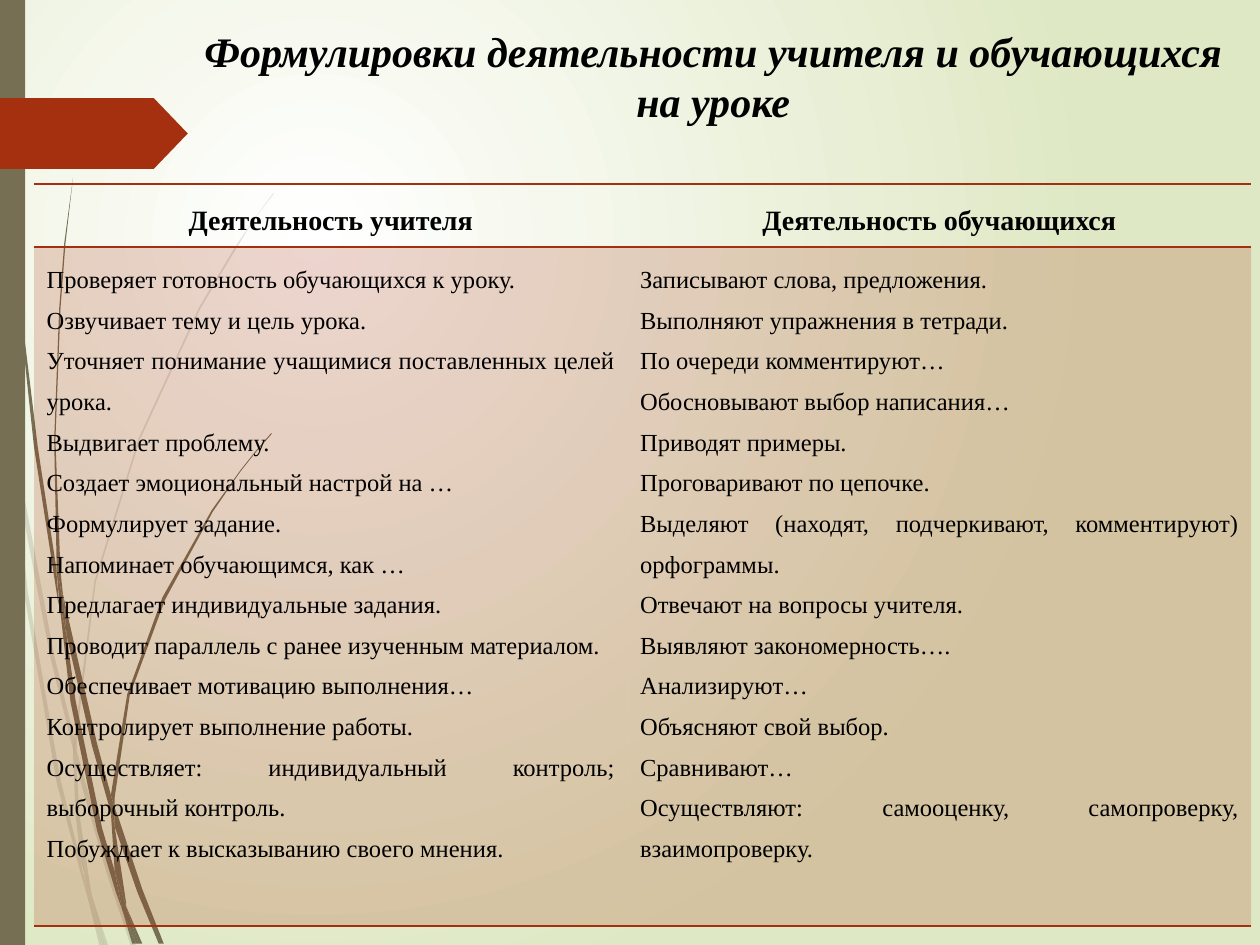
from dataclasses import dataclass

from lxml.etree import SubElement
from pptx import Presentation
from pptx.dml.color import RGBColor
from pptx.enum.shapes import MSO_SHAPE
from pptx.enum.text import MSO_ANCHOR, MSO_AUTO_SIZE, PP_ALIGN
from pptx.oxml.ns import qn
from pptx.util import Inches, Pt

OLIVE = RGBColor(0x76, 0x6F, 0x54)
RUST = RGBColor(0xA5, 0x30, 0x10)
PALE_GREEN = RGBColor(0xDF, 0xE8, 0xC4)
WHITE = RGBColor(0xFF, 0xFF, 0xFF)
BLACK = RGBColor(0, 0, 0)
FONT = "Times New Roman"
NO_STYLE = "{2D5ABB26-0587-4C30-8999-92F81FD0307C}"


@dataclass
class Grass:
    """Blades of grass, outlined in hundredths of an inch."""
    opacity: int
    blades: list[list[tuple[int, int]]]


@dataclass
class Column:
    heading: str
    width: float
    actions: list[str]


PALE_GRASS = Grass(20, [
    [(8, 350), (6, 322), (0, 282), (0, 299), (7, 344)],
    [(40, 522), (59, 599), (59, 586), (43, 520), (10, 345), (12, 376)],
    [(64, 607), (61, 596), (61, 610), (85, 694), (104, 751), (108, 751), (88, 692)],
    [(83, 751), (86, 751), (73, 711)],
    [(64, 683), (48, 619), (22, 469), (12, 376), (8, 350), (19, 470), (45, 621),
     (64, 693), (70, 714), (69, 707)],
    [(58, 599), (60, 646), (64, 683), (67, 692), (73, 711), (72, 706), (63, 646),
     (61, 610), (61, 608)],
    [(61, 584), (76, 462), (111, 349), (159, 245), (187, 198), (201, 175), (217, 154),
     (217, 153), (201, 175), (186, 197), (158, 244), (110, 348), (75, 461), (59, 584),
     (59, 586), (61, 596)],
    [(70, 714), (79, 751), (82, 751)],
    [(61, 608), (61, 610), (61, 596), (59, 586), (58, 599)],
    [(67, 692), (65, 683), (69, 707), (70, 714), (82, 751), (83, 751), (73, 711)],
])
DARK_GRASS = Grass(100, [
    [(5, 110), (14, 233), (27, 355), (46, 477), (47, 481), (45, 457), (45, 453),
     (30, 355), (15, 232), (6, 109), (4, 48), (3, 0), (2, 0), (3, 48)],
    [(73, 592), (88, 645), (88, 633), (88, 631), (77, 590), (50, 472), (53, 505)],
    [(94, 649), (91, 641), (91, 656), (109, 708), (126, 749), (130, 749), (113, 706)],
    [(91, 691), (81, 657), (60, 556), (53, 505), (47, 477), (56, 557), (77, 659),
     (92, 708), (97, 722), (96, 717)],
    [(50, 472), (48, 453), (44, 349), (48, 245), (52, 193), (58, 141), (51, 193),
     (47, 245), (43, 349), (45, 449), (49, 472)],
    [(110, 749), (113, 749), (100, 719)],
    [(47, 477), (53, 505), (50, 472), (49, 472), (45, 449), (45, 453)],
    [(91, 633), (103, 552), (131, 476), (169, 406), (191, 374), (203, 359), (216, 344),
     (215, 344), (203, 358), (191, 373), (168, 405), (129, 474), (101, 551), (88, 631),
     (91, 641)],
    [(97, 722), (105, 749), (108, 749)],
    [(88, 645), (91, 691), (96, 706), (100, 719), (100, 716), (91, 656), (90, 651)],
    [(88, 645), (90, 651), (91, 656), (91, 641), (88, 631), (88, 633)],
    [(96, 706), (91, 691), (96, 717), (97, 722), (108, 749), (110, 749), (100, 719)],
])

TITLE = "Формулировки деятельности учителя и обучающихся\nна уроке"
TEACHER = Column("Деятельность учителя", 4.71, [
    "Проверяет готовность обучающихся к уроку.",
    "Озвучивает тему и цель урока.",
    "Уточняет понимание учащимися поставленных целей урока.",
    "Выдвигает проблему.",
    "Создает эмоциональный настрой на …",
    "Формулирует задание.",
    "Напоминает обучающимся, как …",
    "Предлагает индивидуальные задания.",
    "Проводит параллель с ранее изученным материалом.",
    "Обеспечивает мотивацию выполнения…",
    "Контролирует выполнение работы.",
    "Осуществляет: индивидуальный контроль; выборочный контроль.",
    "Побуждает к высказыванию своего мнения.",
])
STUDENTS = Column("Деятельность обучающихся", 4.95, [
    "Записывают слова, предложения.",
    "Выполняют упражнения в тетради.",
    "По очереди комментируют…",
    "Обосновывают выбор написания…",
    "Приводят примеры.",
    "Проговаривают по цепочке.",
    "Выделяют (находят, подчеркивают, комментируют) орфограммы.",
    "Отвечают на вопросы учителя.",
    "Выявляют закономерность….",
    "Анализируют…",
    "Объясняют свой выбор.",
    "Сравнивают…",
    "Осуществляют: самооценку, самопроверку, взаимопроверку.",
])


def set_opacity(properties, percent: int) -> None:
    color = properties.find(qn("a:solidFill")).find(qn("a:srgbClr"))
    SubElement(color, qn("a:alpha"), val=str(percent * 1000))


def paint(shape, color: RGBColor) -> None:
    shape.shadow.inherit = False
    shape.fill.solid()
    shape.fill.fore_color.rgb = color
    shape.line.fill.background()


def paint_background(slide) -> None:
    fill = slide.background.fill
    fill.gradient()
    for stop, color, position in zip(fill.gradient_stops, (WHITE, PALE_GREEN), (0, 1)):
        stop.color.rgb = color
        stop.position = position
    gradient = next(slide.element.iter(qn("a:gradFill")))
    gradient.remove(gradient.find(qn("a:lin")))
    circle = SubElement(gradient, qn("a:path"), path="circle")
    SubElement(circle, qn("a:fillToRect"), l="50000", t="50000", r="100000", b="100000")


def draw_grass(slide, grass: Grass) -> None:
    tuft = slide.shapes.add_group_shape()
    for start, *rest in grass.blades:
        outline = tuft.shapes.build_freeform(*start, scale=Inches(0.01))
        outline.add_line_segments(rest, close=True)
        blade = outline.convert_to_shape()
        paint(blade, OLIVE)
        if grass.opacity < 100:
            set_opacity(blade.element.spPr, grass.opacity)


def format_text(frame, size: int, align: PP_ALIGN, spacing: float = 1.0,
                bold: bool = False, italic: bool = False) -> None:
    for paragraph in frame.paragraphs:
        paragraph.alignment = align
        paragraph.line_spacing = spacing
        for run in paragraph.runs:
            font = run.font
            font.name, font.size, font.color.rgb = FONT, Pt(size), BLACK
            font.bold, font.italic = bold, italic


def add_border(cell, side: str) -> None:
    line = SubElement(cell._tc.get_or_add_tcPr(), qn(f"a:{side}"), w=str(Pt(1)))
    SubElement(SubElement(line, qn("a:solidFill")), qn("a:srgbClr"), val=str(RUST))


def draw_table(slide, columns: list[Column]) -> None:
    width = sum(column.width for column in columns)
    table = slide.shapes.add_table(2, len(columns), Inches(0.27), Inches(1.46),
                                   Inches(width), Inches(5.89)).table
    table._tbl.tblPr.find(qn("a:tableStyleId")).text = NO_STYLE
    table.first_row = table.horz_banding = False
    table.rows[0].height, table.rows[1].height = Inches(0.5), Inches(5.39)
    for index, column in enumerate(columns):
        table.columns[index].width = Inches(column.width)
        heading, actions = table.cell(0, index), table.cell(1, index)
        heading.text_frame.text = column.heading
        format_text(heading.text_frame, 16, PP_ALIGN.CENTER, 1.5, bold=True)
        actions.text_frame.text = "\n".join(column.actions)
        format_text(actions.text_frame, 14, PP_ALIGN.JUSTIFY, 1.5)
        # Borders go before the fill in the cell properties
        for cell, sides in ((heading, ("lnT", "lnB")), (actions, ("lnT", "lnB"))):
            for side in sides:
                add_border(cell, side)
        heading.fill.background()
        actions.fill.solid()
        actions.fill.fore_color.rgb = RUST
        set_opacity(actions._tc.tcPr, 20)


def main() -> None:
    prs = Presentation()
    prs.slide_width, prs.slide_height = Inches(10), Inches(7.5)
    slide = prs.slides.add_slide(prs.slide_layouts[5])

    # Background, grass, side band and arrow
    paint_background(slide)
    draw_grass(slide, PALE_GRASS)
    draw_grass(slide, DARK_GRASS)
    band = slide.shapes.add_shape(MSO_SHAPE.RECTANGLE, 0, 0, Inches(0.2), Inches(7.5))
    paint(band, OLIVE)
    arrow = slide.shapes.add_shape(MSO_SHAPE.PENTAGON, 0, Inches(0.78),
                                   Inches(1.49), Inches(0.56))
    arrow.adjustments[0] = 0.48
    paint(arrow, RUST)

    # Title
    title = slide.shapes.title
    title.left, title.top = Inches(1.32), Inches(0.15)
    title.width, title.height = Inches(8.68), Inches(0.91)
    title.text_frame.text = TITLE
    title.text_frame.vertical_anchor = MSO_ANCHOR.TOP
    title.text_frame.auto_size = MSO_AUTO_SIZE.SHAPE_TO_FIT_TEXT
    format_text(title.text_frame, 24, PP_ALIGN.CENTER, bold=True, italic=True)

    # Activities of teacher and students
    draw_table(slide, [TEACHER, STUDENTS])
    prs.save("out.pptx")


if __name__ == "__main__":
    main()
